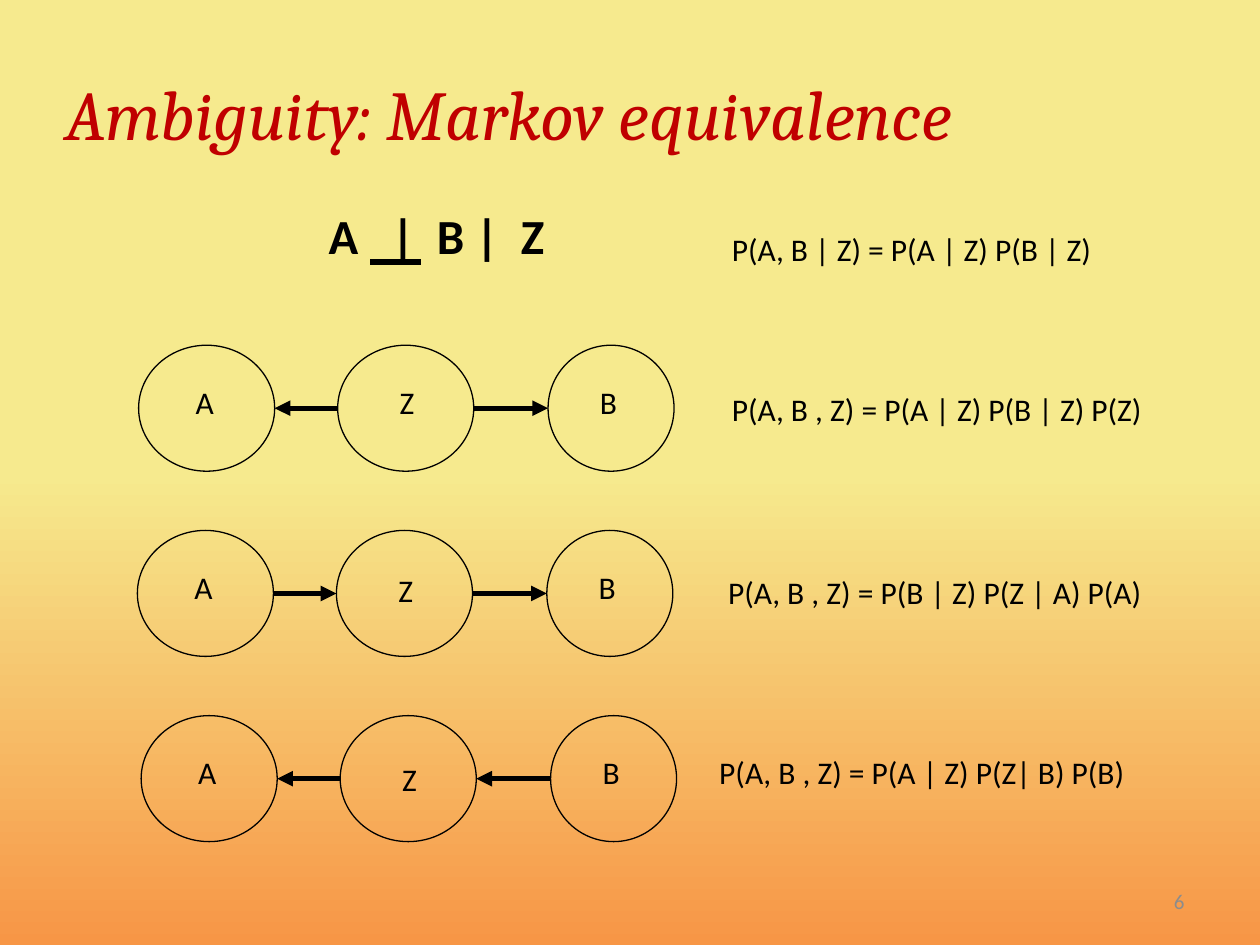
from copy import deepcopy

from lxml import etree
from pptx import Presentation
from pptx import util as u
from pptx.dml.color import RGBColor
from pptx.enum import shapes, text
from pptx.oxml.ns import qn

BLACK = RGBColor(0x00, 0x00, 0x00)
RED = RGBColor(0xC0, 0x00, 0x00)
GREY = RGBColor(0x8C, 0x8C, 0x8C)
YELLOW = RGBColor(0xF6, 0xEA, 0x8E)
ORANGE = RGBColor(0xF7, 0x96, 0x46)
LEFT, CENTER, RIGHT = text.PP_ALIGN.LEFT, text.PP_ALIGN.CENTER, text.PP_ALIGN.RIGHT

prs = Presentation()
prs.slide_width, prs.slide_height = u.Inches(10), u.Inches(7.5)
slide = prs.slides.add_slide(prs.slide_layouts[6])


def add_label(parent, words, box, align=LEFT, wrap=True, **font_format):
    label = parent.add_textbox(*[u.Inches(v) for v in box])
    frame = label.text_frame
    frame.word_wrap = wrap
    paragraph = frame.paragraphs[0]
    paragraph.alignment = align
    run = paragraph.add_run()
    run.text = words
    values = {"name": "Calibri", "size": u.Pt(18), **font_format}
    color = values.pop("color", BLACK)
    for key, value in values.items():
        setattr(run.font, key, value)
    run.font.color.rgb = color
    return frame


def add_line(parent, x1, x2, y, arrowhead=False):
    line = parent.add_connector(shapes.MSO_CONNECTOR.STRAIGHT,
                                *[u.Inches(v) for v in (x1, y, x2, y)])
    line.line.color.rgb = BLACK
    line.line.width = u.Pt(3)
    properties = line.line._get_or_add_ln()
    if arrowhead:
        etree.SubElement(properties, qn("a:tailEnd"), type="triangle")
    etree.SubElement(properties.getparent(), qn("a:effectLst"))


# Background: yellow to the middle, then fading to orange
background = slide.background.fill
background.gradient()
background.gradient_angle = 270
for stop, color, position in zip(background.gradient_stops, (YELLOW, ORANGE), (0, 1)):
    stop.color.rgb = color
    stop.position = position
stop_list = slide.element.find(".//" + qn("a:gsLst"))
middle = deepcopy(stop_list[0])
middle.set("pos", "50000")
stop_list.insert(1, middle)

# Title and page number
add_label(slide.shapes, "Ambiguity: Markov equivalence", (0.42, 0.51, 9.42, 0.77),
          name="Cambria", size=u.Pt(40), italic=True, color=RED)
page = add_label(slide.shapes, "6", (7.17, 6.95, 2.33, 0.4), RIGHT,
                 size=u.Pt(12), color=GREY)
page.vertical_anchor = text.MSO_ANCHOR.MIDDLE

# Conditional independence statement and its formula
independence = slide.shapes.add_group_shape().shapes
add_label(independence, "A   |  B |  Z", (2.51, 1.58, 3.09, 0.57), size=u.Pt(28), bold=True)
add_line(independence, 2.94, 3.34, 2.08)
add_label(slide.shapes, "P(A, B | Z) = P(A | Z) P(B | Z)", (5.71, 1.78, 5.92, 0.4))

# Nodes: name, left offset, width, label offset, label width
NODES = [("A", 0, 1.08, 0.35, 0.35), ("Z", 1.58, 1.08, 1.97, 0.32), ("B", 3.25, 1, 3.56, 0.34)]
EDGES = [(1.08, 1.58), (2.66, 3.25)]

# Graphs: left, drop of the Z label, edges pointing right, formula and its place
GRAPHS = [
    (1.1, 0.25, (False, True), "P(A, B , Z) = P(A | Z) P(B | Z) P(Z)", 5.71, 3.05),
    (1.09, 0.27, (True, True), "P(A, B , Z) = P(B | Z) P(Z | A) P(A)", 5.68, 4.5),
    (1.12, 0.3, (False, False), "P(A, B , Z) = P(A | Z) P(Z| B) P(B)", 5.61, 5.93),
]
for row, (left, z_drop, directions, formula, formula_left, formula_top) in enumerate(GRAPHS):
    top = 2.74 + 1.47 * row
    graph = slide.shapes.add_group_shape().shapes
    for name, offset, width, label_offset, label_width in NODES:
        node = graph.add_shape(shapes.MSO_SHAPE.OVAL, u.Inches(left + offset), u.Inches(top),
                               u.Inches(width), u.Inches(1))
        node.shadow.inherit = False
        node.fill.background()
        node.line.color.rgb = BLACK
        node.line.width = u.Pt(0.75)
        drop = z_drop if name == "Z" else 0.25
        add_label(graph, name, (left + label_offset, top + drop, label_width, 0.4),
                  CENTER, wrap=False)
    for (start, end), points_right in zip(EDGES, directions):
        if not points_right:
            start, end = end, start
        add_line(graph, left + start, left + end, top + 0.5, arrowhead=True)
    add_label(slide.shapes, formula, (formula_left, formula_top, 5.92, 0.4))

prs.save("out.pptx")
